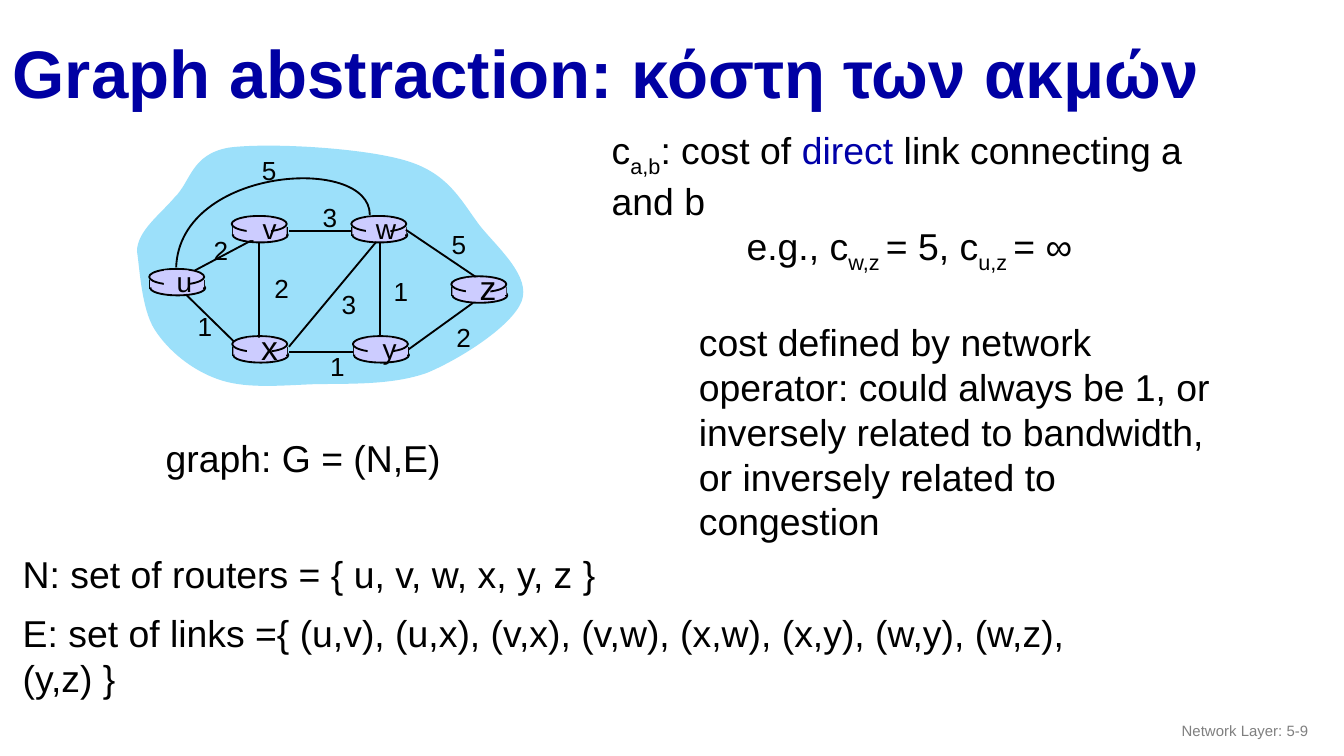
import pptx
import pptx.util
import pptx.dml.color
import pptx.enum.text
import pptx.enum.shapes
import pptx.oxml
import pptx.oxml.ns

Cm, Pt = pptx.util.Cm, pptx.util.Pt
Align, Anchor = pptx.enum.text.PP_ALIGN, pptx.enum.text.MSO_ANCHOR
Shape = pptx.enum.shapes.MSO_SHAPE


class Theme:
    font = "Arial"
    ink, head, key = "000000", "0000A3", "0000A8"
    foot, cloud, node = "7F7F7F", "9CE0FA", "CCCCFF"
    title, body, cost, small = 36, 20, 14, 8
    line = 1


# Content: all lengths in centimetres
TITLE = "Graph abstraction: κόστη των ακμών"

# Router name: left, top, letter size, shift of the letter
NODES = {
    "u": (2.82, 5.08, 15, 0.17), "y": (6.67, 6.35, 15, 0.20),
    "x": (4.39, 6.35, 18, 0.21), "w": (6.64, 4.08, 15, 0.16),
    "v": (4.38, 4.08, 15, 0.22), "z": (8.53, 5.22, 18, 0.20),
}

# Link: from, to, cost, place of the cost
LINKS = [
    ((3.68, 5.11), (4.83, 4.50), "2", (3.68, 4.32)),
    ((7.18, 4.60), (7.18, 6.32), "1", (7.08, 5.11)),
    ((4.90, 4.60), (4.90, 6.38), "2", (4.83, 5.05)),
    ((5.46, 6.55), (7.11, 4.57), "3", (6.10, 5.35)),
    ((7.72, 6.60), (8.94, 5.72), "2", (8.27, 5.98)),
    ((6.68, 6.65), (5.46, 6.65), "1", (5.88, 6.52)),
    ((4.42, 6.45), (3.51, 5.56), "1", (3.38, 5.76)),
    ((6.65, 4.37), (5.46, 4.37), "3", (5.74, 3.71)),
    ((8.99, 5.23), (7.67, 4.34), "5", (8.18, 4.21)),
]
ARC_COST = ("5", (4.59, 2.82))

# Curves: a start point, then two handles and an end point for each piece
ARC = [(6.99, 4.06), (6.99, 2.92), (3.40, 3.15), (3.33, 5.05)]
CLOUD = [
    (2.59, 4.75),
    (2.59, 4.37), (3.02, 4.06), (3.30, 3.73),
    (3.61, 3.43), (3.61, 2.92), (4.32, 2.79),
    (5.05, 2.69), (6.91, 2.79), (7.72, 3.05),
    (8.51, 3.30), (8.74, 3.84), (9.09, 4.29),
    (9.45, 4.72), (10.03, 5.23), (9.86, 5.69),
    (9.68, 6.15), (8.74, 6.76), (8.08, 7.04),
    (7.39, 7.29), (6.53, 7.24), (5.87, 7.26),
    (5.21, 7.29), (4.60, 7.34), (4.11, 7.16),
    (3.63, 6.99), (3.18, 6.63), (2.92, 6.22),
    (2.67, 5.82), (2.64, 5.05), (2.59, 4.75),
]

# Text boxes: left, top, width, height, text, format
SUB = {"base": "-25000"}
COSTS = [
    ["c", ("a,b", SUB), ": cost of ", ("direct", {"color": Theme.key}),
     " link connecting a and b"],
    ["e.g., c", ("w,z ", SUB), "= 5, c", ("u,z ", SUB), "= ∞"],
    ["cost defined by network operator: could always be 1, or inversely "
     "related to bandwidth, or inversely related to congestion"],
]
NOTES = [
    (2.94, 8.12, 6.07, 1.9, [["graph: G = (N,E)"]], {}),
    (11.37, 2.31, 12.27, 7.9, COSTS,
     {"indents": (0, 2.55, 1.65), "gaps": (0, 0, 24)}),
    (0.24, 10.31, 12.4, 1.04,
     [["N: set of routers = { u, v, w, x, y, z }"]], {}),
    (0.24, 11.42, 20.98, 1.9,
     [["E: set of links ={ (u,v), (u,x), (v,x), (v,w), (x,w), (x,y), "
       "(w,y), (w,z), (y,z) }"]], {}),
    (19.2, 13.42, 5.72, 0.76, [["Network Layer: 5-9"]],
     {"size": Theme.small, "color": Theme.foot, "align": Align.RIGHT,
      "anchor": Anchor.MIDDLE}),
]

show = pptx.Presentation()
show.slide_width, show.slide_height = Cm(25.4), Cm(14.28)
slide = show.slides.add_slide(show.slide_layouts[5])
shapes = slide.shapes


def rgb(code):
    return pptx.dml.color.RGBColor.from_string(code)


def write(box, paras, size=Theme.body, color=Theme.ink, bold=False,
          align=Align.LEFT, anchor=Anchor.TOP, space=None,
          indents=(), gaps=()):
    frame = box.text_frame
    frame.word_wrap = True
    frame.auto_size = pptx.enum.text.MSO_AUTO_SIZE.NONE
    frame.vertical_anchor = anchor
    frame.margin_left = frame.margin_right = Cm(0.19)
    frame.margin_top = frame.margin_bottom = Cm(0.1)
    for i, parts in enumerate(paras):
        para = frame.add_paragraph() if i else frame.paragraphs[0]
        para.alignment, para.line_spacing = align, space
        if indents:
            para._p.get_or_add_pPr().set("marL", str(Cm(indents[i])))
        if gaps:
            para.space_before = Pt(gaps[i])
        for part in parts:
            text, look = (part, {}) if isinstance(part, str) else part
            run = para.add_run()
            run.text = text
            run.font.name, run.font.size = Theme.font, Pt(size)
            run.font.bold = bold
            run.font.color.rgb = rgb(look.get("color", color))
            if "base" in look:
                run.font._element.set("baseline", look["base"])


def label(left, top, wide, high, paras, **look):
    box = shapes.add_textbox(Cm(left), Cm(top), Cm(wide), Cm(high))
    write(box, paras, **look)


def paint(shape, fill=None, line=False):
    shape.shadow.inherit = False
    if fill:
        shape.fill.solid()
        shape.fill.fore_color.rgb = rgb(fill)
    else:
        shape.fill.background()
    if line:
        shape.line.color.rgb = rgb(Theme.ink)
        shape.line.width = Pt(Theme.line)
    else:
        shape.line.fill.background()


def block(kind, left, top, wide, high, line=False):
    shape = shapes.add_shape(kind, Cm(left), Cm(top), Cm(wide), Cm(high))
    paint(shape, Theme.node, line)


def join(start, end):
    kind = pptx.enum.shapes.MSO_CONNECTOR.STRAIGHT
    line = shapes.add_connector(kind, *map(Cm, start + end))
    line.line.color.rgb = rgb(Theme.ink)
    line.line.width = Pt(Theme.line)
    line._element.spPr.append(pptx.oxml.parse_xml(
        "<a:effectLst %s/>" % pptx.oxml.ns.nsdecls("a")))


def curve(points, close=False, **look):
    dots = [tuple(map(Cm, point)) for point in points]
    maker = shapes.build_freeform(*dots[0])
    maker.add_line_segments(dots[1:], close=close)
    shape = maker.convert_to_shape()
    # Each three line steps become one Bezier piece
    steps = shape._element.xpath(".//a:lnTo")
    for i in range(0, len(points) - 1, 3):
        bend = pptx.oxml.parse_xml(
            "<a:cubicBezTo %s/>" % pptx.oxml.ns.nsdecls("a"))
        steps[i].addprevious(bend)
        for step in steps[i:i + 3]:
            bend.append(step[0])
            step.getparent().remove(step)
    paint(shape, **look)


def router(left, top):
    block(Shape.OVAL, left + 0.02, top + 0.22, 1.04, 0.28, line=True)
    for side in (left + 0.02, left + 1.04):
        join((side, top + 0.2), (side, top + 0.37))
    block(Shape.RECTANGLE, left + 0.02, top + 0.2, 1.02, 0.15)
    block(Shape.OVAL, left, top, 1.04, 0.3, line=True)


def letter(name, left, top, size, shift):
    block(Shape.RECTANGLE, left + 0.28, top + 0.03, 0.46, 0.43)
    lift = 0.28 if size > 15 else 0.19
    label(left + shift, top - lift, 0.99, 0.99, [[name]],
          size=size, align=Align.CENTER)


# Title
title = shapes.title
title.left, title.top, title.width, title.height = map(Cm, (0.05, 0.53, 23.65, 1.85))
write(title, [[TITLE]], size=Theme.title, color=Theme.head, bold=True,
      anchor=Anchor.MIDDLE, space=0.9)

# Network graph: cloud, routers, links, letters, costs
curve(CLOUD, close=True, fill=Theme.cloud)
for left, top, *_ in NODES.values():
    router(left, top)
for start, end, *_ in LINKS:
    join(start, end)
curve(ARC, line=True)
for name, place in NODES.items():
    letter(name, *place)
for cost, spot in [link[2:] for link in LINKS] + [ARC_COST]:
    label(*spot, 0.99, 0.99, [[cost]], size=Theme.cost, align=Align.CENTER)

# Explanations and footer
for *place, paras, look in NOTES:
    label(*place, paras, **look)

show.save("out.pptx")
